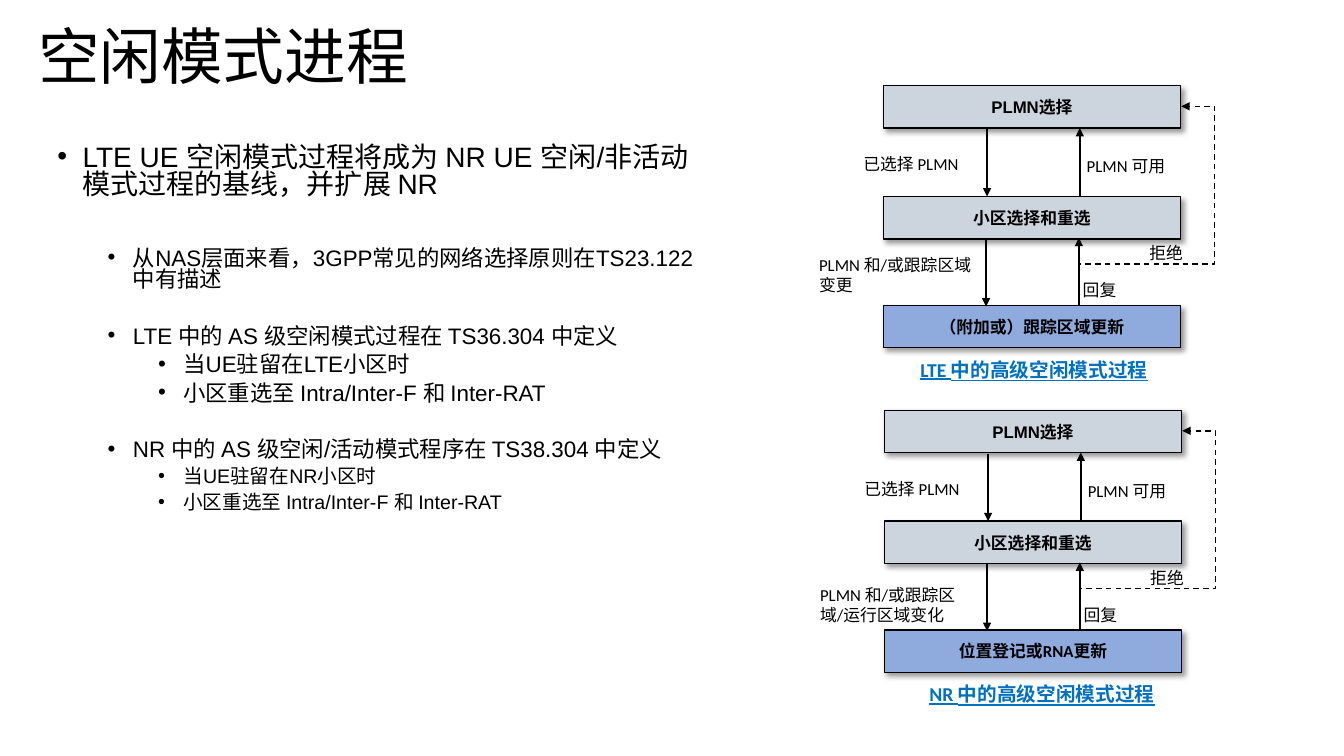
from lxml.etree import SubElement
from pptx import Presentation
from pptx.dml.color import RGBColor
from pptx.enum.dml import MSO_LINE
from pptx.enum.shapes import MSO_CONNECTOR, MSO_SHAPE
from pptx.enum.text import MSO_ANCHOR, MSO_AUTO_SIZE, PP_ALIGN
from pptx.oxml.ns import qn
from pptx.util import Inches, Pt

# The slide is a grid of square cells, 133.3 columns by 75 rows
CELL = Inches(0.1)
COLUMNS, ROWS = 133.3, 75

BLACK = RGBColor(0x00, 0x00, 0x00)
GREY = RGBColor(0xCC, 0xD4, 0xDE)
BLUE = RGBColor(0x8F, 0xAA, 0xDC)
CAPTION_BLUE = RGBColor(0x00, 0x70, 0xC0)

TITLE_FONT = {"name": "Arial", "size": Pt(44)}
LABEL_FONT = {"name": "Calibri", "size": Pt(12)}
STEP_FONT = {"size": Pt(12), "bold": True}
CAPTION_FONT = {"name": "Calibri", "size": Pt(14), "bold": True, "underline": True}
STEP_FRAME = {"word_wrap": False, "vertical_anchor": MSO_ANCHOR.MIDDLE,
              "margin_left": Inches(0.08), "margin_right": Inches(0.08),
              "margin_top": Inches(0.05), "margin_bottom": Inches(0.05)}
LABEL_FRAME = {"word_wrap": True, "auto_size": MSO_AUTO_SIZE.SHAPE_TO_FIT_TEXT}

# Level, size, space before, wording
BULLETS = [
    (0, 20, 10, "LTE UE 空闲模式过程将成为 NR UE 空闲/非活动模式过程的基线，并扩展 NR"),
    (1, 16, 35, "从NAS层面来看，3GPP常见的网络选择原则在TS23.122中有描述"),
    (1, 16, 25, "LTE 中的 AS 级空闲模式过程在 TS36.304 中定义"),
    (2, 16, 5, "当UE驻留在LTE小区时"),
    (2, 16, 5, "小区重选至 Intra/Inter-F 和 Inter-RAT"),
    (1, 16, 25, "NR 中的 AS 级空闲/活动模式程序在 TS38.304 中定义"),
    (2, 14, 5, "当UE驻留在NR小区时"),
    (2, 14, 5, "小区重选至 Intra/Inter-F 和 Inter-RAT"),
]

# Box of each procedure, last step, change label and its row, caption and its column
PROCEDURES = [
    ((87.6, 8.5, 29.5, 26), [("（附加或）跟踪区域更新", "Arial")],
     "PLMN 和/或跟踪区域变更", 16.3, "LTE 中的高级空闲模式过程", -5.7),
    ((87.7, 40.7, 29.5, 26), [("位置登记或RNA", "Calibri"), ("更新", "Arial")],
     "PLMN 和/或跟踪区域/运行区域变化", 16.8, "NR 中的高级空闲模式过程", -5),
]


def cells(*counts):
    return [round(count * CELL) for count in counts]


def apply_format(target, values):
    for name, value in values.items():
        setattr(target, name, value)


def add_run(paragraph, text, font, color=BLACK):
    run = paragraph.add_run()
    run.text = text
    apply_format(run.font, font)
    run.font.color.rgb = color


def add_label(slide, box, text, font, color=BLACK, frame=LABEL_FRAME, **paragraph_format):
    text_frame = slide.shapes.add_textbox(*cells(*box)).text_frame
    apply_format(text_frame, frame)
    paragraph = text_frame.paragraphs[0]
    apply_format(paragraph, paragraph_format)
    add_run(paragraph, text, font, color)


def add_step(slide, box, runs, fill):
    step = slide.shapes.add_shape(MSO_SHAPE.RECTANGLE, *cells(*box))
    step.shadow.inherit = False
    step.fill.solid()
    step.fill.fore_color.rgb = fill
    step.line.color.rgb = BLACK
    step.line.width = Pt(1)
    effects = step.element.spPr.find(qn("a:effectLst"))
    shadow = SubElement(effects, qn("a:outerShdw"), blurRad=str(Pt(4)), dist=str(Pt(3)),
                        dir="2700000", algn="tl", rotWithShape="0")
    shade = SubElement(shadow, qn("a:srgbClr"), val=str(BLACK))
    SubElement(shade, qn("a:alpha"), val="40000")
    apply_format(step.text_frame, STEP_FRAME)
    paragraph = step.text_frame.paragraphs[0]
    paragraph.alignment = PP_ALIGN.CENTER
    for text, font_name in runs:
        add_run(paragraph, text, {**STEP_FONT, "name": font_name})


def add_arrow(slide, kind, ends, arrowhead, **line_format):
    arrow = slide.shapes.add_connector(kind, *cells(*ends))
    arrow.line.color.rgb = BLACK
    apply_format(arrow.line, line_format)
    properties = arrow.element.spPr
    SubElement(properties.find(qn("a:ln")), qn(arrowhead), type="triangle")
    SubElement(properties, qn("a:effectLst"))
    return arrow


def add_reject_arrow(slide, left, top, width, height):
    # Drawn from corner to corner, then turned a quarter to leave and enter sideways
    arrow = add_arrow(slide, MSO_CONNECTOR.ELBOW,
                      (left + width, top + height, left, top), "a:tailEnd",
                      width=Pt(1), dash_style=MSO_LINE.DASH)
    properties = arrow.element.spPr
    properties.find(qn("a:xfrm")).set("rot", "5400000")
    geometry = properties.find(qn("a:prstGeom"))
    geometry.set("prst", "bentConnector4")
    bends = geometry.find(qn("a:avLst"))
    if bends is None:
        bends = SubElement(geometry, qn("a:avLst"))
    for name, value in (("adj1", 2300), ("adj2", 132900)):
        SubElement(bends, qn("a:gd"), name=name, fmla=f"val {value}")


def add_title(slide, box):
    add_label(slide, box, "空闲模式进程", TITLE_FONT, line_spacing=0.9,
              frame={"word_wrap": True, "vertical_anchor": MSO_ANCHOR.MIDDLE})


def add_bullets(slide, box):
    text_frame = slide.shapes.add_textbox(*cells(*box)).text_frame
    text_frame.word_wrap = True
    for index, (level, size, gap, text) in enumerate(BULLETS):
        paragraph = text_frame.add_paragraph() if index else text_frame.paragraphs[0]
        apply_format(paragraph, {"level": level, "line_spacing": 0.8, "space_before": Pt(gap)})
        properties = paragraph._p.get_or_add_pPr()
        properties.set("marL", str(Inches(0.25 + 0.5 * level)))
        properties.set("indent", str(-Inches(0.25)))
        SubElement(properties, qn("a:buFont"), typeface="Arial")
        SubElement(properties, qn("a:buChar"), char="•")
        add_run(paragraph, text, {"name": "Arial", "size": Pt(size)})


def add_procedure(slide, box, last_step, change, change_row, caption, caption_column):
    left, top, width, _ = box

    # Steps
    steps = [(0, [("PLMN选择", "Arial")], GREY),
             (11, [("小区选择和重选", "Calibri")], GREY),
             (21.8, last_step, BLUE)]
    for row, runs, fill in steps:
        add_step(slide, (left, top + row, width, 4.2), runs, fill)

    # Arrows down and up between the steps
    for column, row, arrowhead in ((10.3, 4.3, "a:tailEnd"), (10.2, 15.2, "a:tailEnd"),
                                   (19.5, 4.2, "a:headEnd"), (19.4, 15.1, "a:headEnd")):
        x, y = left + column, top + row
        add_arrow(slide, MSO_CONNECTOR.STRAIGHT, (x, y, x, y + 6.7), arrowhead, width=Pt(1.5))
    add_reject_arrow(slide, left + 16.5, top + 5, 16, 10.1)

    # Labels beside the arrows
    labels = [(19.2, 6.5, 14.2, 3, "PLMN 可用"),
              (-7.35, change_row, 18.1, 5, change),
              (18.8, 18.8, 9.5, 3, "回复"),
              (-2.95, 6.3, 14.1, 3, "已选择 PLMN"),
              (25.4, 15.1, 9.5, 3, "拒绝")]
    for column, row, wide, high, text in labels:
        add_label(slide, (left + column, top + row, wide, high), text, LABEL_FONT)

    # Caption
    add_label(slide, (left + caption_column, top + 26.5, 41.3, 3.4), caption,
              CAPTION_FONT, CAPTION_BLUE, alignment=PP_ALIGN.CENTER)


def main():
    presentation = Presentation()
    presentation.slide_width, presentation.slide_height = cells(COLUMNS, ROWS)
    slide = presentation.slides.add_slide(presentation.slide_layouts[6])
    add_title(slide, (2.8, 0, 109.3, 11.9))
    add_bullets(slide, (4.7, 14, 65.5, 45.5))
    for procedure in PROCEDURES:
        add_procedure(slide, *procedure)
    presentation.save("out.pptx")


if __name__ == "__main__":
    main()
